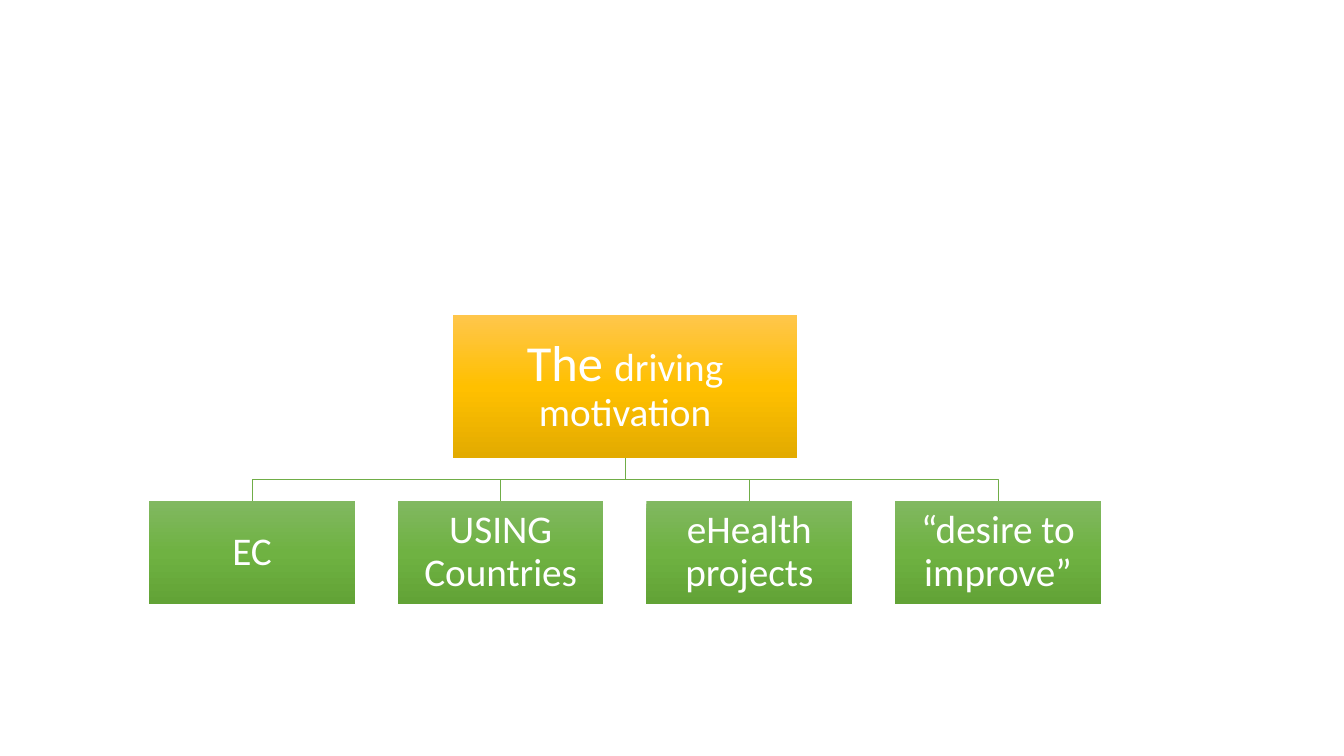
"""Build a one-level tree: a driving motivation and its four sources."""
from copy import deepcopy

from pptx import Presentation, util as u
from pptx.dml.color import RGBColor
from pptx.enum import shapes, text

HUES = {
    "gold": ["FFC64B", "FFC000", "E3AB00"],
    "green": ["81B861", "6FB242", "62A336"],
    "line": "70AD47",
    "text": "FFFFFF",
}
LEAVES = ["EC", "USING Countries", "eHealth projects", "“desire to improve”"]

deck = Presentation()
deck.slide_width, deck.slide_height = u.Inches(13.33), u.Inches(7.5)
slide = deck.slides.add_slide(deck.slide_layouts[6])

left, wide, high = 1.48, 2.04, 1.02
step = 13.33 * 0.185
mid = left + (3 * step + wide) / 2
root_w, root_h, root_y = 3.42, 1.41, 3.13
base = root_y + root_h
gap = 0.43
row = base + gap


def add_box(runs, x, y, w, h, hues, pad):
    """Add a gradient box that holds (words, size) runs."""
    box = slide.shapes.add_shape(
        shapes.MSO_SHAPE.RECTANGLE, *map(u.Inches, (x, y, w, h)))
    box.shadow.inherit = False
    box.line.fill.background()
    box.fill.gradient()
    box.fill.gradient_angle = 270
    first = box.fill.gradient_stops[0]._gs
    first.addnext(deepcopy(first))
    for i, stop in enumerate(box.fill.gradient_stops):
        stop.color.rgb = RGBColor.from_string(hues[i])
        stop.position = i / 2
    frame = box.text_frame
    frame.word_wrap = True
    frame.vertical_anchor = text.MSO_ANCHOR.MIDDLE
    frame.margin_left = frame.margin_right = u.Inches(pad)
    frame.margin_top = frame.margin_bottom = u.Inches(pad)
    para = frame.paragraphs[0]
    para.alignment = text.PP_ALIGN.CENTER
    para.line_spacing = 0.9
    for words, size in runs:
        run = para.add_run()
        run.text = words
        run.font.name = "Calibri"
        run.font.size = u.Pt(size)
        run.font.color.rgb = RGBColor.from_string(HUES["text"])


for col in reversed(range(len(LEAVES))):
    end = left + col * step + wide / 2
    bend = base + gap / 2
    turns = [(mid, base), (mid, bend), (end, bend), (end, row)]
    start, *rest = [(u.Inches(x), u.Inches(y)) for x, y in turns]
    path = slide.shapes.build_freeform(*start)
    path.add_line_segments(rest, close=False)
    link = path.convert_to_shape()
    link.shadow.inherit = False
    link.fill.background()
    link.line.color.rgb = RGBColor.from_string(HUES["line"])
    link.line.width = u.Pt(0.5)

add_box([("The ", 36), ("driving motivation", 28)], x=mid - root_w / 2,
        y=root_y, w=root_w, h=root_h, hues=HUES["gold"], pad=0.03)
for col, leaf in enumerate(LEAVES):
    add_box([(leaf, 28)], x=left + col * step, y=row, w=wide, h=high,
            hues=HUES["green"], pad=0.02)

deck.save("out.pptx")
